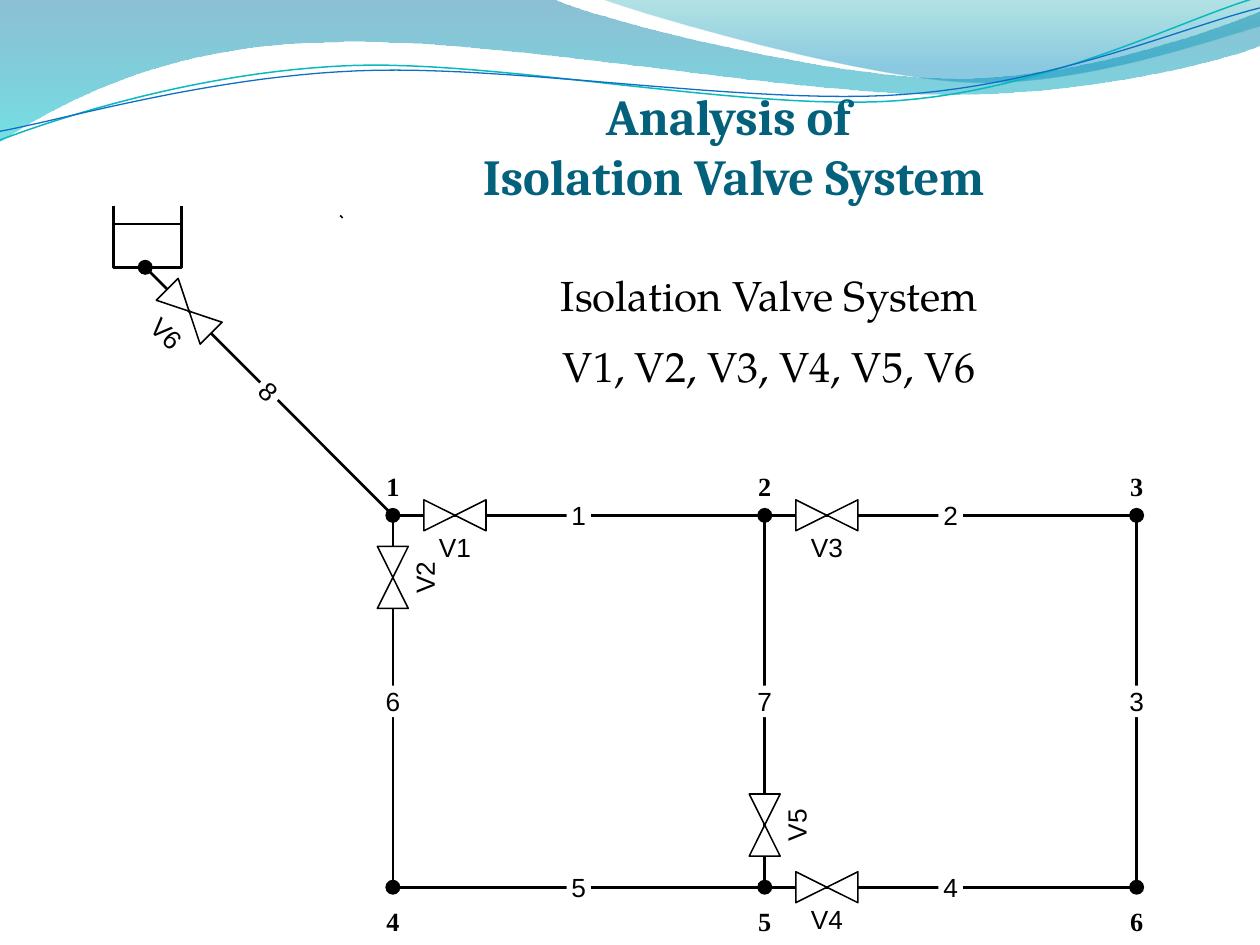
from math import cos, radians, sin

from lxml.etree import SubElement
from pptx import Presentation
from pptx.dml.color import RGBColor
from pptx.enum.shapes import MSO_CONNECTOR as Connector, MSO_SHAPE as Preset
from pptx.enum.text import MSO_ANCHOR as Anchor, MSO_AUTO_SIZE as AutoSize, PP_ALIGN as Align
from pptx.oxml import parse_xml
from pptx.oxml.ns import nsdecls, qn
from pptx.util import Pt

COLORS = {
    "ink": "000000", "paper": "FFFFFF", "title": "04617B",
    "wave_teal": "0AB8BF", "wave_blue": "0F6FC6",
    "blue": "0074A1", "cyan": "00C6CF", "teal": "00A1A9", "azure": "008BBF",
}
THIN, THICK = 0.88, 1.5


def rgb(name):
    return RGBColor.from_string(COLORS[name])


def write(frame, text, size=15, font="Arial", color="ink", bold=False,
          anchor=Anchor.MIDDLE, inset=(0, 0, 0, 0), gap=0):
    """Put centred text into a frame, one paragraph per line."""
    frame.word_wrap = True
    frame.auto_size = AutoSize.NONE
    frame.vertical_anchor = anchor
    (frame.margin_left, frame.margin_top,
     frame.margin_right, frame.margin_bottom) = map(Pt, inset)
    for index, line in enumerate(text.split("\n")):
        para = frame.add_paragraph() if index else frame.paragraphs[0]
        para.text = line
        para.alignment = Align.CENTER
        para.space_before = Pt(gap if index else 0)
        for span in para.runs:
            span.font.size, span.font.name = Pt(size), font
            span.font.bold, span.font.color.rgb = bold, rgb(color)


def flatten(start, *segments, steps=24):
    """Turn line ends (x, y) and cubic curves (six numbers) into points."""
    points = [start]
    for segment in segments:
        if len(segment) == 2:
            points.append(segment)
            continue
        corners = [points[-1], segment[:2], segment[2:4], segment[4:]]
        for step in range(1, steps + 1):
            t = step / steps
            weights = ((1 - t) ** 3, 3 * t * (1 - t) ** 2, 3 * t * t * (1 - t), t ** 3)
            points.append(tuple(sum(w * c[axis] for w, c in zip(weights, corners))
                                for axis in (0, 1)))
    return points


class Diagram:
    def __init__(self, page):
        self.page = page
        self.shapes = page.shapes

    def style(self, shape, fill=None, line=None, width=THIN):
        shape.shadow.inherit = False
        if fill:
            shape.fill.solid()
            shape.fill.fore_color.rgb = rgb(fill)
        else:
            shape.fill.background()
        if line:
            shape.line.color.rgb, shape.line.width = rgb(line), Pt(width)
        else:
            shape.line.fill.background()
        return shape

    def outline(self, points, close=False, **style):
        (x, y), *rest = points
        builder = self.shapes.build_freeform(Pt(x), Pt(y))
        builder.add_line_segments([(Pt(a), Pt(b)) for a, b in rest], close=close)
        return self.style(builder.convert_to_shape(), **style)

    def wave(self, points, stops):
        """Draw a filled wave; stops are (position, colour, opacity) in percent."""
        shape = self.outline(points, close=True)
        marks = "".join(
            f'<a:gs pos="{place * 1000}"><a:srgbClr val="{COLORS[color]}">'
            f'<a:alpha val="{opacity * 1000}"/></a:srgbClr></a:gs>'
            for place, color, opacity in stops)
        gradient = parse_xml(f'<a:gradFill {nsdecls("a")} rotWithShape="1"><a:gsLst>{marks}'
                             '</a:gsLst><a:lin ang="5400000" scaled="0"/></a:gradFill>')
        properties = shape._element.spPr
        properties.replace(properties.find(qn("a:noFill")), gradient)

    def line(self, start, end, width=THICK):
        link = self.shapes.add_connector(Connector.STRAIGHT, *map(Pt, (*start, *end)))
        link.line.color.rgb, link.line.width = rgb("ink"), Pt(width)
        SubElement(link._element.spPr, qn("a:effectLst"))

    def dot(self, center, size=8.6):
        x, y = (value - size / 2 for value in center)
        self.style(self.shapes.add_shape(Preset.OVAL, Pt(x), Pt(y), Pt(size), Pt(size)), fill="ink")

    def label(self, text, center, width=14, height=18, turn=0, fill=None, **format):
        x, y = center
        box = self.shapes.add_textbox(Pt(x - width / 2), Pt(y - height / 2), Pt(width), Pt(height))
        box.rotation = turn
        if fill:
            box.fill.solid()
            box.fill.fore_color.rgb = rgb(fill)
        write(box.text_frame, text, **format)

    def pipe(self, text, start, end, turn=0):
        self.line(start, end)
        middle = [(a + b) / 2 for a, b in zip(start, end)]
        self.label(text, middle, turn=turn, fill="paper")

    def valve(self, text, node, turn=0, distance=35.5):
        """Place a bow tie at a distance from its node, its label beside it."""
        c, s = cos(radians(turn)), sin(radians(turn))

        def place(along, across):
            return (node[0] + along * c - across * s, node[1] + along * s + across * c)

        half, side = 17.75, 8.85
        corners = [(-half, -side), (-half, side), (half, -side), (half, side)]
        self.outline([place(distance + a, b) for a, b in corners],
                     close=True, fill="paper", line="ink")
        self.label(text, place(distance, 18), width=26, turn=turn % 360)


def main():
    deck = Presentation()
    deck.slide_width, deck.slide_height = Pt(720), Pt(540)
    page = deck.slides.add_slide(deck.slide_layouts[5])
    diagram = Diagram(page)

    # Waves along the top edge
    diagram.wave(
        flatten((0, 0), (317, 0), (343, 12, 478, 45, 546, 45), (614, 45, 690, 19, 720, 6.5),
                (720, 26), (708, 32, 626, 55, 537, 54), (448, 54, 275, 20, 185, 24.5),
                (93, 26, 33, 60, 0, 81)),
        [(0, "blue", 45), (100, "cyan", 55)])
    diagram.wave(
        flatten((345, 0), (366, 8, 491, 44.5, 554, 47), (616, 49.5, 692, 23, 720, 15), (720, 0)),
        [(0, "teal", 30), (80, "azure", 45)])
    diagram.outline(
        flatten((0, 80), (34.5, 67, 114, 41, 199.5, 37.5), (284.5, 34, 427, 64, 513.5, 57.5),
                (600, 51, 675.5, 11, 718.5, -1.5)),
        line="wave_teal", width=0.85)
    diagram.outline(
        flatten((0, 75), (34, 69, 118, 44, 204, 40.5), (290, 36.5, 430, 60.5, 516, 54),
                (602, 48, 677.5, 15, 720, 4.5)),
        line="wave_blue", width=0.75)

    # Title, in front of the waves
    title = page.shapes.title
    title.left, title.top, title.width, title.height = map(Pt, (110, 49, 618.5, 68.5))
    write(title.text_frame, "Analysis of \vIsolation Valve System", size=28.8, font="Cambria",
          color="title", bold=True, anchor=Anchor.BOTTOM, inset=(0, 3.6, 0, 0))
    page.shapes._spTree.append(title._element)

    # List of valves
    diagram.label("Isolation Valve System\nV1, V2, V3, V4, V5, V6", (439.5, 190.5),
                  width=375, height=80, size=24, font="TeX Gyre Pagella",
                  anchor=Anchor.TOP, inset=(7.2, 3.6, 7.2, 3.6), gap=12)
    diagram.line((194.4, 123.1), (195.8, 124.6), THIN)

    # Network: two rows of three numbered nodes, and the reservoir outlet
    left, top, pitch = 224.5, 294.5, 212.5
    nodes = {row * 3 + column + 1: (left + column * pitch, top + row * pitch)
             for row in range(2) for column in range(3)}
    outlet = (83, 152.75)

    # Pipes
    diagram.pipe("8", outlet, nodes[1], turn=45)
    for text, start, end in [("1", 1, 2), ("2", 2, 3), ("6", 1, 4), ("7", 2, 5),
                             ("4", 5, 6), ("5", 4, 5), ("3", 3, 6)]:
        diagram.pipe(text, nodes[start], nodes[end])

    # Nodes and their numbers
    diagram.dot(outlet)
    for number, (x, y) in nodes.items():
        diagram.dot((x, y))
        diagram.label(str(number), (x, y - 17 if number <= 3 else y + 19),
                      font="Times New Roman", bold=True)

    # Valves
    diagram.valve("V1", nodes[1])
    diagram.valve("V3", nodes[2])
    diagram.valve("V4", nodes[5])
    diagram.valve("V5", nodes[5], turn=-90)
    diagram.valve("V2", nodes[1], turn=-90, distance=-35.5)
    diagram.valve("V6", outlet, turn=45)

    # Reservoir with its water level
    diagram.outline([(65, 117.5), (65, 152.75), (103.75, 152.75), (103.75, 117.5)],
                    line="ink", width=THICK)
    diagram.line((65, 128), (103.75, 128), THIN)

    deck.save("out.pptx")


if __name__ == "__main__":
    main()
